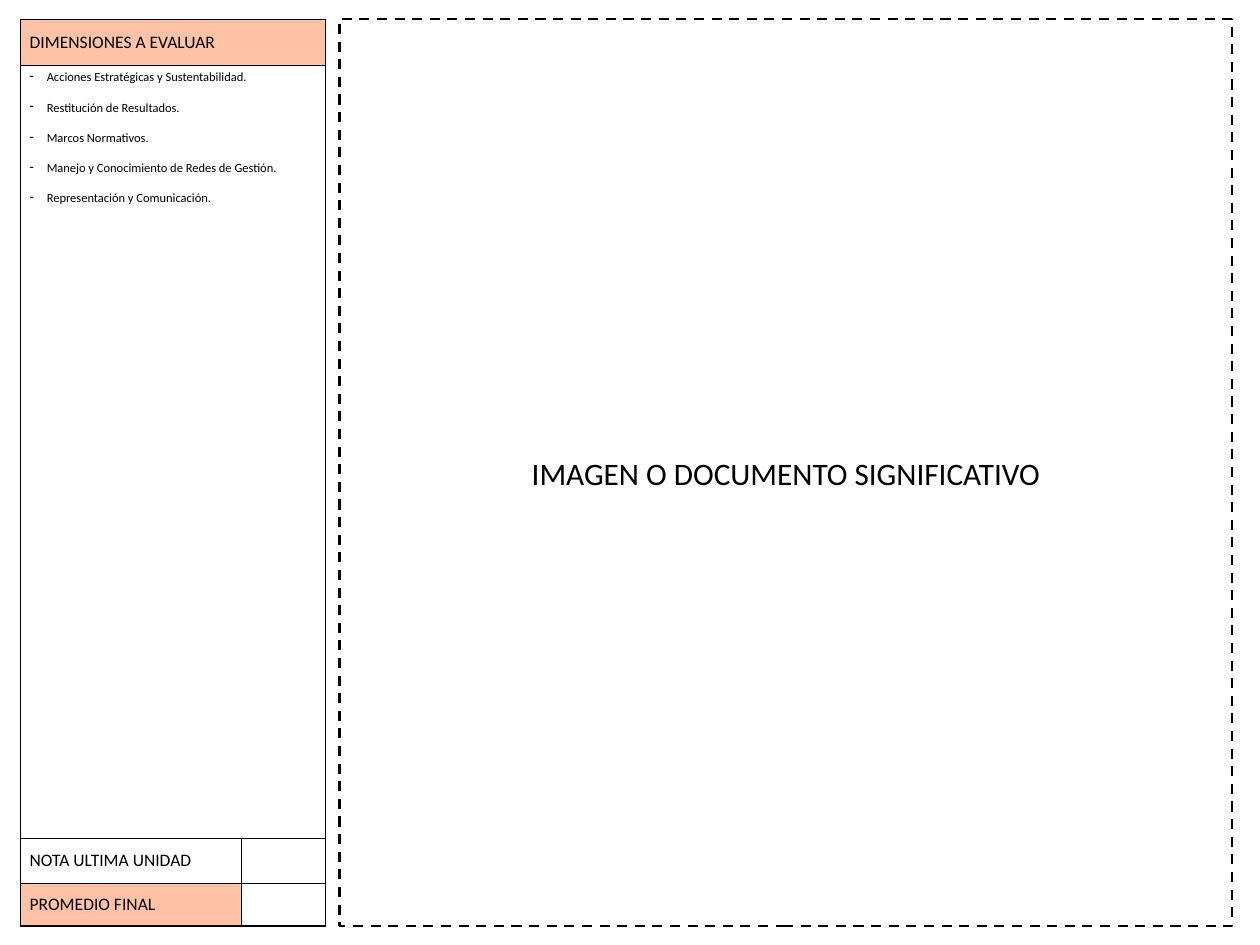
from lxml import etree
from pptx import Presentation
from pptx.dml.color import RGBColor
from pptx.enum import dml, shapes, text
from pptx.oxml.ns import qn
from pptx.util import Inches, Pt

FONT = "Calibri"
BLACK, WHITE, PEACH = "000000", "FFFFFF", "FDC3A4"
DIMENSIONS = [
    "Acciones Estratégicas y Sustentabilidad.",
    "Restitución de Resultados.",
    "Marcos Normativos.",
    "Manejo y Conocimiento de Redes de Gestión.",
    "Representación y Comunicación.",
]


def color(hex_value):
    return RGBColor.from_string(hex_value)


def set_font(paragraph, size):
    font = paragraph.font
    font.name, font.size, font.bold = FONT, Pt(size), False
    font.color.rgb = color(BLACK)


def set_borders(cell, **widths):
    """Draw the cell edges; widths are points for L, R, T and B."""
    properties = cell._tc.get_or_add_tcPr()
    for index, side in enumerate("LRTB"):
        edge = etree.Element(qn(f"a:ln{side}"), w=str(Pt(widths[side])))
        fill = etree.SubElement(edge, qn("a:solidFill"))
        etree.SubElement(fill, qn("a:srgbClr"), val=BLACK)
        properties.insert(index, edge)


def style_cell(cell, fill, **widths):
    cell.fill.solid()
    cell.fill.fore_color.rgb = color(fill)
    cell.vertical_anchor = text.MSO_ANCHOR.MIDDLE
    set_borders(cell, **widths)


def label_cell(cell, label):
    cell.text = label
    set_font(cell.text_frame.paragraphs[0], 14)


def list_dimensions(cell):
    cell.vertical_anchor = text.MSO_ANCHOR.TOP
    cell.text = "\n".join(DIMENSIONS)
    for index, item in enumerate(cell.text_frame.paragraphs):
        set_font(item, 10)
        item.space_before = Pt(12 if index else 0)
        properties = item._p.get_or_add_pPr()
        properties.set("marL", str(Inches(0.19)))
        properties.set("indent", str(Inches(-0.19)))
        bullet = etree.Element(qn("a:buChar"), char="-")
        properties.find(qn("a:defRPr")).addprevious(bullet)


def add_evaluation_table(slide, left, top, width, height):
    table = slide.shapes.add_table(4, 2, left, top, width, height).table
    table.first_row = table.horz_banding = False

    # Grid: the list row and the label column take what is left
    grade_width = Inches(0.94)
    table.columns[0].width = width - grade_width
    table.columns[1].width = grade_width
    header, last_grade, average = Inches(0.52), Inches(0.49), Inches(0.48)
    body = height - header - last_grade - average
    for row, row_height in zip(table.rows, (header, body, last_grade, average)):
        row.height = row_height

    # Fills and borders
    for cell in (table.cell(0, 0), table.cell(0, 1)):
        style_cell(cell, PEACH, L=1, R=1, T=0.5, B=1)
    for cell in (table.cell(1, 0), table.cell(1, 1)):
        style_cell(cell, WHITE, L=1, R=1, T=1, B=1)
    for row, fill, top_width, bottom_width in ((2, WHITE, 1, 0.5), (3, PEACH, 0.5, 1)):
        style_cell(table.cell(row, 0), fill, L=1, R=0.5, T=top_width, B=bottom_width)
        style_cell(table.cell(row, 1), WHITE, L=0.5, R=1, T=top_width, B=bottom_width)
    for row in (0, 1):
        table.cell(row, 0).merge(table.cell(row, 1))

    # Wording
    label_cell(table.cell(0, 0), "DIMENSIONES A EVALUAR")
    list_dimensions(table.cell(1, 0))
    label_cell(table.cell(2, 0), "NOTA ULTIMA UNIDAD")
    label_cell(table.cell(3, 0), "PROMEDIO FINAL")


def add_document_frame(slide, left, top, width, height):
    frame = slide.shapes.add_shape(shapes.MSO_SHAPE.RECTANGLE, left, top, width, height)
    frame.shadow.inherit = False
    frame.fill.background()
    frame.line.color.rgb = color(BLACK)
    frame.line.width = Pt(2)
    frame.line.dash_style = dml.MSO_LINE.DASH
    frame.text_frame.vertical_anchor = text.MSO_ANCHOR.MIDDLE
    caption = frame.text_frame.paragraphs[0]
    caption.text = "IMAGEN O DOCUMENTO SIGNIFICATIVO"
    caption.alignment = text.PP_ALIGN.CENTER
    set_font(caption, 25)


def main():
    deck = Presentation()
    deck.slide_width, deck.slide_height = Inches(14), Inches(10.5)
    slide = deck.slides.add_slide(deck.slide_layouts[6])
    top, height = Inches(0.21), Inches(10.08)
    add_document_frame(slide, Inches(3.77), top, Inches(9.92), height)
    add_evaluation_table(slide, Inches(0.23), top, Inches(3.39), height)
    deck.save("out.pptx")


if __name__ == "__main__":
    main()
